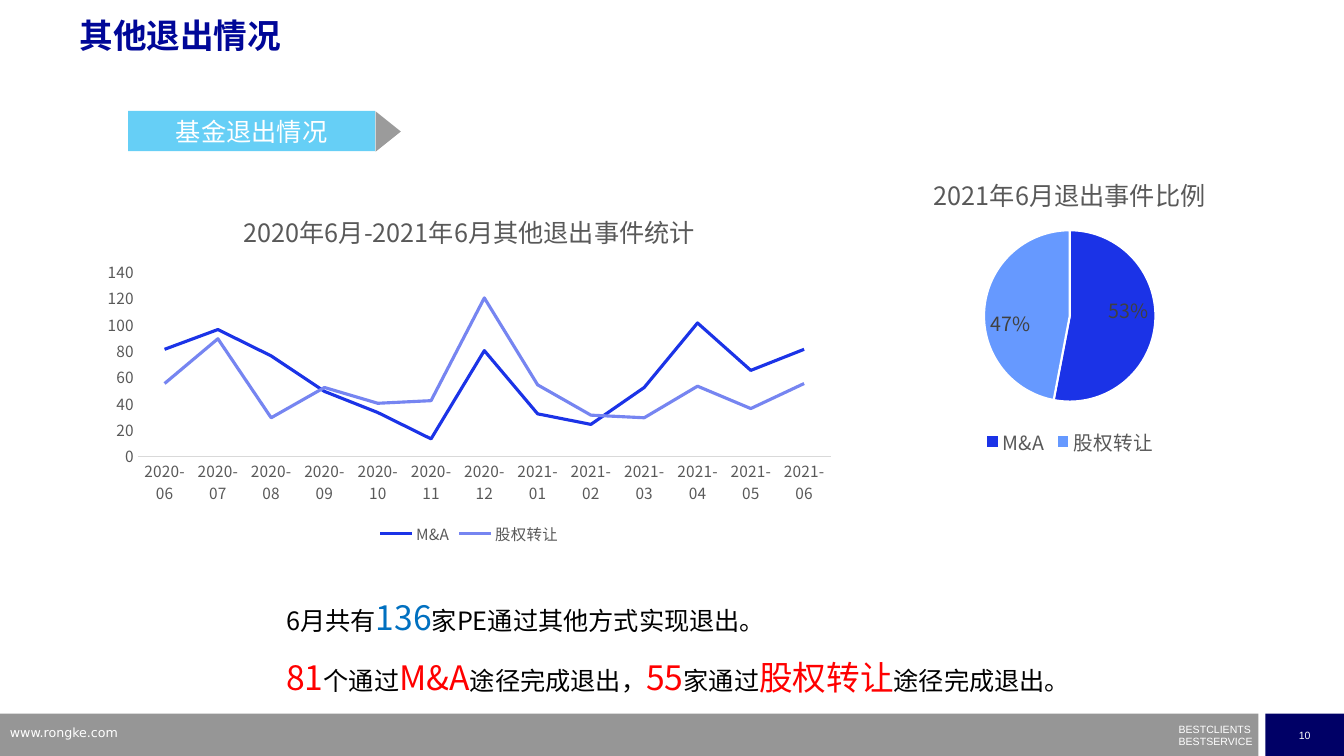
"""Build the slide on other fund exits, with a line chart, a pie chart and a summary."""
from lxml.etree import SubElement
from pptx import Presentation
from pptx.chart.data import CategoryChartData
from pptx.dml.color import RGBColor
from pptx.enum.chart import XL_CHART_TYPE, XL_LABEL_POSITION, XL_LEGEND_POSITION, XL_TICK_MARK
from pptx.enum.shapes import MSO_SHAPE
from pptx.enum.text import MSO_ANCHOR, PP_ALIGN
from pptx.oxml.ns import qn
from pptx.util import Inches, Pt

THEME = {
    "cjk": "Noto Sans CJK SC", "latin": "Arial", "web": "DejaVu Sans",
    "title": "000798", "text": "000000", "white": "FFFFFF", "gray": "595959",
    "footer": "969696", "page": "000066", "banner": "00B0F0", "axis": "D9D9D9",
    "label": "404040", "total": "0070C0", "accent": "FF0000",
    "lines": ["1B33E7", "7685F1"], "slices": ["1B33E7", "6699FF"],
    "sz_title": 24, "sz_big": 24, "sz_body": 18, "sz_legend": 14,
    "sz_axis": 11, "sz_web": 9, "sz_small": 7.5,
}

TITLE = "其他退出情况"
BANNER = "基金退出情况"
SUMMARY = [
    [("6月共有", "text"), ("136", "total"), ("家PE通过其他方式实现退出。", "text")],
    [("81", "accent"), ("个通过", "text"), ("M&A", "accent"), ("途径完成退出，", "text"),
     ("55", "accent"), ("家通过", "text"), ("股权转让", "accent"), ("途径完成退出。", "text")],
]
SLOGAN = ["BESTCLIENTS", "BESTSERVICE"]
WEB = "www.rongke.com"
PAGE = "10"

TREND_TITLE = "2020年6月-2021年6月其他退出事件统计"
MONTHS = [f"2020-{m:02}" for m in range(6, 13)] + [f"2021-{m:02}" for m in range(1, 7)]
TREND = {
    "M&A": [81, 96, 76, 49, 33, 13, 80, 32, 24, 52, 101, 65, 81],
    "股权转让": [55, 89, 29, 52, 40, 42, 120, 54, 31, 29, 53, 36, 55],
}
SHARE_TITLE = "2021年6月退出事件比例"
SHARE = {"Series 1": [53, 47]}


def rgb(name):
    return RGBColor.from_string(THEME.get(name, name))


def style(font, size, color, face="cjk", bold=False):
    font.size, font.name, font.bold = Pt(THEME[size]), THEME[face], bold
    font.color.rgb = rgb(color)


def write(tf, lines, size, color, face="cjk", bold=False, align=PP_ALIGN.LEFT, spacing=1.0):
    for i, line in enumerate(lines):
        p = tf.paragraphs[0] if i == 0 else tf.add_paragraph()
        p.alignment, p.line_spacing = align, spacing
        r = p.add_run()
        r.text = line
        style(r.font, size, color, face, bold)


def add_text(s, box, inset=True):
    tf = s.shapes.add_textbox(*map(Inches, box)).text_frame
    tf.word_wrap = True
    if not inset:
        tf.margin_left = tf.margin_top = tf.margin_right = tf.margin_bottom = 0
    return tf


def add_block(s, kind, box, color, alpha=100):
    sp = s.shapes.add_shape(kind, *map(Inches, box))
    sp.shadow.inherit = False
    sp.fill.solid()
    sp.fill.fore_color.rgb = rgb(color)
    sp.line.fill.background()
    if alpha < 100:
        clr = sp.element.spPr.find(qn("a:solidFill"))[0]
        SubElement(clr, qn("a:alpha")).set("val", str(alpha * 1000))
    sp.text_frame.vertical_anchor = MSO_ANCHOR.MIDDLE
    return sp


def add_chart(s, kind, box, title, cats, series, plot_box, legend_size):
    data = CategoryChartData()
    data.categories = cats
    for name, vals in series.items():
        data.add_series(name, vals)
    chart = s.shapes.add_chart(kind, *map(Inches, box), data).chart
    style(chart.font, "sz_axis", "gray")
    chart.has_title = True
    write(chart.chart_title.text_frame, [title], "sz_body", "gray", align=PP_ALIGN.CENTER)
    chart.chart_title.include_in_layout = False
    chart.has_legend = True
    chart.legend.position = XL_LEGEND_POSITION.BOTTOM
    chart.legend.include_in_layout = False
    style(chart.legend.font, legend_size, "gray")
    area = chart.element.find(".//" + qn("c:plotArea"))
    layout = area.find(qn("c:layout"))
    if layout is None:
        layout = SubElement(area, qn("c:layout"))
        area.insert(0, layout)
    manual = SubElement(layout, qn("c:manualLayout"))
    modes = [("layoutTarget", "inner"), ("xMode", "edge"), ("yMode", "edge")]
    for tag, val in modes + list(zip("xywh", plot_box)):
        SubElement(manual, qn("c:" + tag)).set("val", str(val))
    return chart


def add_trend(s):
    chart = add_chart(s, XL_CHART_TYPE.LINE, (0.92, 1.92, 7.47, 3.52), TREND_TITLE,
                      MONTHS, TREND, (0.06, 0.22, 0.92, 0.52), "sz_axis")
    for axis in (chart.category_axis, chart.value_axis):
        axis.has_major_gridlines = False
        axis.major_tick_mark = axis.minor_tick_mark = XL_TICK_MARK.NONE
        style(axis.tick_labels.font, "sz_axis", "gray")
    chart.category_axis.format.line.color.rgb = rgb("axis")
    chart.category_axis.format.line.width = Pt(0.75)
    val = chart.value_axis
    val.format.line.fill.background()
    val.minimum_scale, val.maximum_scale, val.major_unit = 0, 140, 20
    for ser, color in zip(chart.plots[0].series, THEME["lines"]):
        ser.smooth = False
        ser.format.line.color.rgb = rgb(color)
        ser.format.line.width = Pt(2.25)


def add_share(s):
    chart = add_chart(s, XL_CHART_TYPE.PIE, (8.11, 1.56, 5, 3), SHARE_TITLE,
                      list(TREND), SHARE, (0.33, 0.24, 0.34, 0.57), "sz_legend")
    plot = chart.plots[0]
    plot.vary_by_categories = True
    for i, color in enumerate(THEME["slices"]):
        fmt = plot.series[0].points[i].format
        fmt.fill.solid()
        fmt.fill.fore_color.rgb = rgb(color)
        fmt.line.color.rgb = rgb("white")
        fmt.line.width = Pt(1.5)
    plot.has_data_labels = True
    labels = plot.data_labels
    labels.show_percentage, labels.show_value = True, False
    labels.number_format, labels.number_format_is_linked = "0%", False
    labels.position = XL_LABEL_POSITION.INSIDE_END
    style(labels.font, "sz_legend", "label")


def add_footer(s):
    top, height = 7.08, 0.42
    add_block(s, MSO_SHAPE.RECTANGLE, (0, top, 12.48, height), "footer")
    page = add_block(s, MSO_SHAPE.RECTANGLE, (12.55, top, 0.78, height), "page")
    write(page.text_frame, [PAGE], "sz_small", "white", "latin", align=PP_ALIGN.CENTER)
    write(add_text(s, (11.69, 7.17, 0.76, 0.24), False), SLOGAN, "sz_small", "white", "latin")
    write(add_text(s, (0, 7.14, 3.2, 0.26)), [WEB], "sz_web", "white", "web")


def add_summary(s):
    tf = add_text(s, (2.84, 5.72, 8.4, 1.14), False)
    for i, line in enumerate(SUMMARY):
        p = tf.paragraphs[0] if i == 0 else tf.add_paragraph()
        p.alignment, p.line_spacing = PP_ALIGN.JUSTIFY, 1.5
        for text, color in line:
            r = p.add_run()
            r.text = text
            style(r.font, "sz_body" if color == "text" else "sz_big", color)


def set_east_asian(root):
    for latin in list(root.iter(qn("a:latin"))):
        ea = SubElement(latin.getparent(), qn("a:ea"))
        ea.set("typeface", THEME["cjk"])
        latin.addnext(ea)


def main():
    prs = Presentation()
    prs.slide_width, prs.slide_height = Inches(13.33), Inches(7.5)
    s = prs.slides.add_slide(prs.slide_layouts[6])
    add_footer(s)
    add_summary(s)
    banner = add_block(s, MSO_SHAPE.RECTANGLE, (1.27, 1.1, 2.45, 0.4), "banner", 60)
    write(banner.text_frame, [BANNER], "sz_body", "white", align=PP_ALIGN.CENTER)
    add_block(s, MSO_SHAPE.ISOSCELES_TRIANGLE, (3.65, 1.18, 0.4, 0.25), "gray", 60).rotation = 90
    write(add_text(s, (0.69, 0.14, 9, 0.7)), [TITLE], "sz_title", "title", "latin", True, spacing=0.9)
    add_trend(s)
    add_share(s)
    set_east_asian(s.element)
    for sp in s.shapes:
        if sp.has_chart:
            set_east_asian(sp.chart.element)
    prs.save("out.pptx")


if __name__ == "__main__":
    main()
